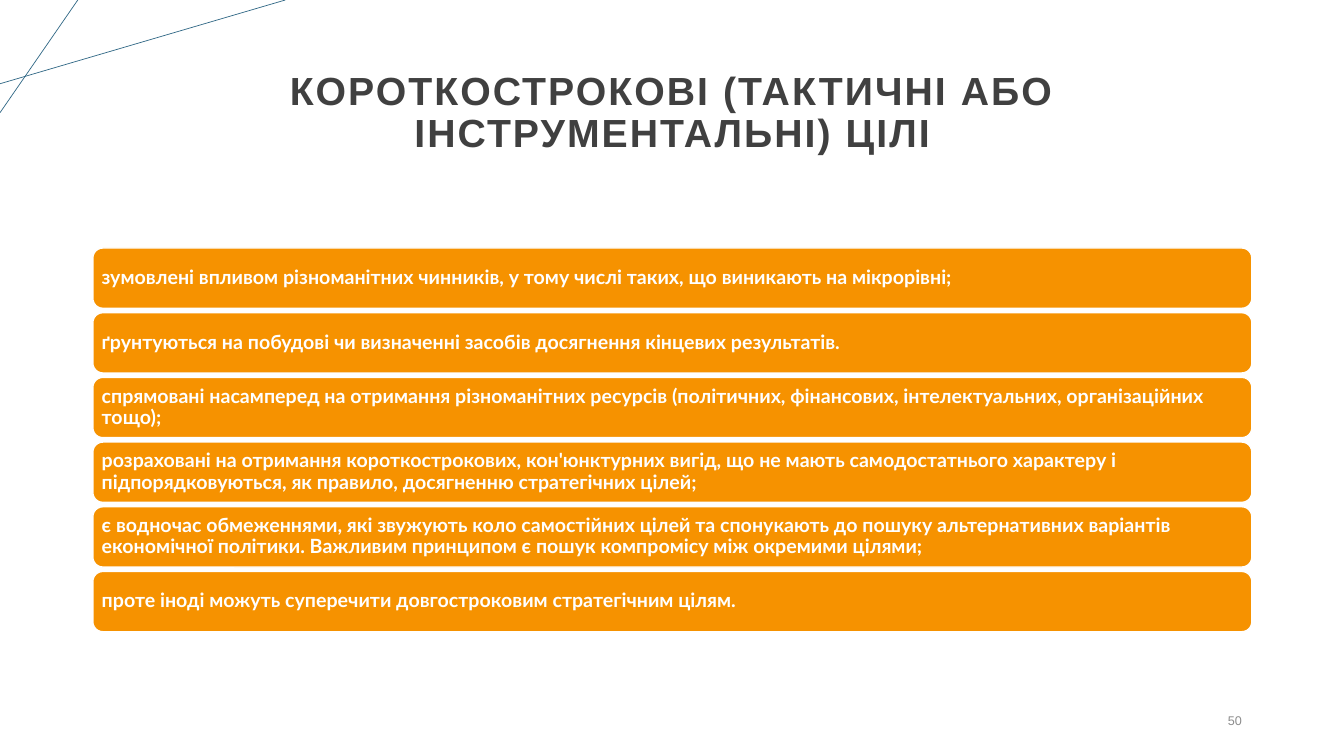
import pptx
import pptx.dml.color
import pptx.enum.shapes
import pptx.enum.text
import pptx.oxml.ns
import pptx.util
from lxml import etree

Cm = pptx.util.Cm
Pt = pptx.util.Pt
ALIGN = pptx.enum.text.PP_ALIGN


def color(code):
    return pptx.dml.color.RGBColor.from_string(code)


def style(frame, align, size, face, code, bold=False):
    frame.word_wrap = True
    frame.auto_size = pptx.enum.text.MSO_AUTO_SIZE.NONE
    frame.vertical_anchor = pptx.enum.text.MSO_ANCHOR.MIDDLE
    para = frame.paragraphs[0]
    para.alignment = align
    font = para.font
    font.size, font.name, font.bold = Pt(size), face, bold
    font.color.rgb = color(code)
    return para


deck = pptx.Presentation()
deck.slide_width, deck.slide_height = Cm(33.87), Cm(19.05)
slide = deck.slides.add_slide(deck.slide_layouts[5])
shapes = slide.shapes

# Corner lines
for x1, y1, x2, y2 in [(0, 2.11, 7.19, 0), (1.96, 0, 0, 2.84)]:
    line = shapes.add_connector(
        pptx.enum.shapes.MSO_CONNECTOR.STRAIGHT, Cm(x1), Cm(y1), Cm(x2), Cm(y2))
    line.line.color.rgb = color("316886")
    line.line.width = Pt(0.5)
    etree.SubElement(line._element.spPr, pptx.oxml.ns.qn("a:effectLst"))

# Title
left, width = Cm(2.34), Cm(29.21)
title = shapes.title
title.left, title.top, title.width, title.height = left, Cm(1.02), width, Cm(3.68)
title.text_frame.text = "КОРОТКОСТРОКОВІ (ТАКТИЧНІ АБО ІНСТРУМЕНТАЛЬНІ) ЦІЛІ"
para = style(title.text_frame, ALIGN.CENTER, 28, "Arial", "404040", True)
para.line_spacing = 0.9
para.runs[0]._r.get_or_add_rPr().set("spc", "150")

# Goal bars
goals = [
    "зумовлені впливом різноманітних чинників, у тому числі таких, що виникають на мікрорівні;",
    "ґрунтуються на побудові чи визначенні засобів досягнення кінцевих результатів.",
    "спрямовані насамперед на отримання різноманітних ресурсів (політичних, фінансових, "
    "інтелектуальних, організаційних тощо);",
    "розраховані на отримання короткострокових, кон'юнктурних вигід, що не мають "
    "самодостатнього характеру і підпорядковуються, як правило, досягненню стратегічних цілей;",
    "є водночас обмеженнями, які звужують коло самостійних цілей та спонукають до пошуку "
    "альтернативних варіантів економічної політики. Важливим принципом є пошук компромісу "
    "між окремими цілями;",
    "проте іноді можуть суперечити довгостроковим стратегічним цілям.",
]
for row, goal in enumerate(goals):
    bar = shapes.add_shape(
        pptx.enum.shapes.MSO_SHAPE.ROUNDED_RECTANGLE,
        left, Cm(6.25 + 1.63 * row), width, Cm(1.52))
    bar.shadow.inherit = False
    bar.fill.solid()
    bar.fill.fore_color.rgb = color("F69200")
    bar.line.color.rgb = color("FFFFFF")
    bar.line.width = Pt(1)
    frame = bar.text_frame
    frame.margin_left = frame.margin_right = Cm(0.15)
    frame.margin_top = frame.margin_bottom = Cm(0.15)
    frame.text = goal
    style(frame, ALIGN.LEFT, 14, "Lato", "FFFFFF", True).line_spacing = 0.9

# Page number
page = shapes.add_textbox(Cm(23.93), Cm(17.65), Cm(7.62), Cm(1.02))
page.text_frame.text = "50"
style(page.text_frame, ALIGN.RIGHT, 9, "Arial", "8C8C8C")

deck.save("out.pptx")
